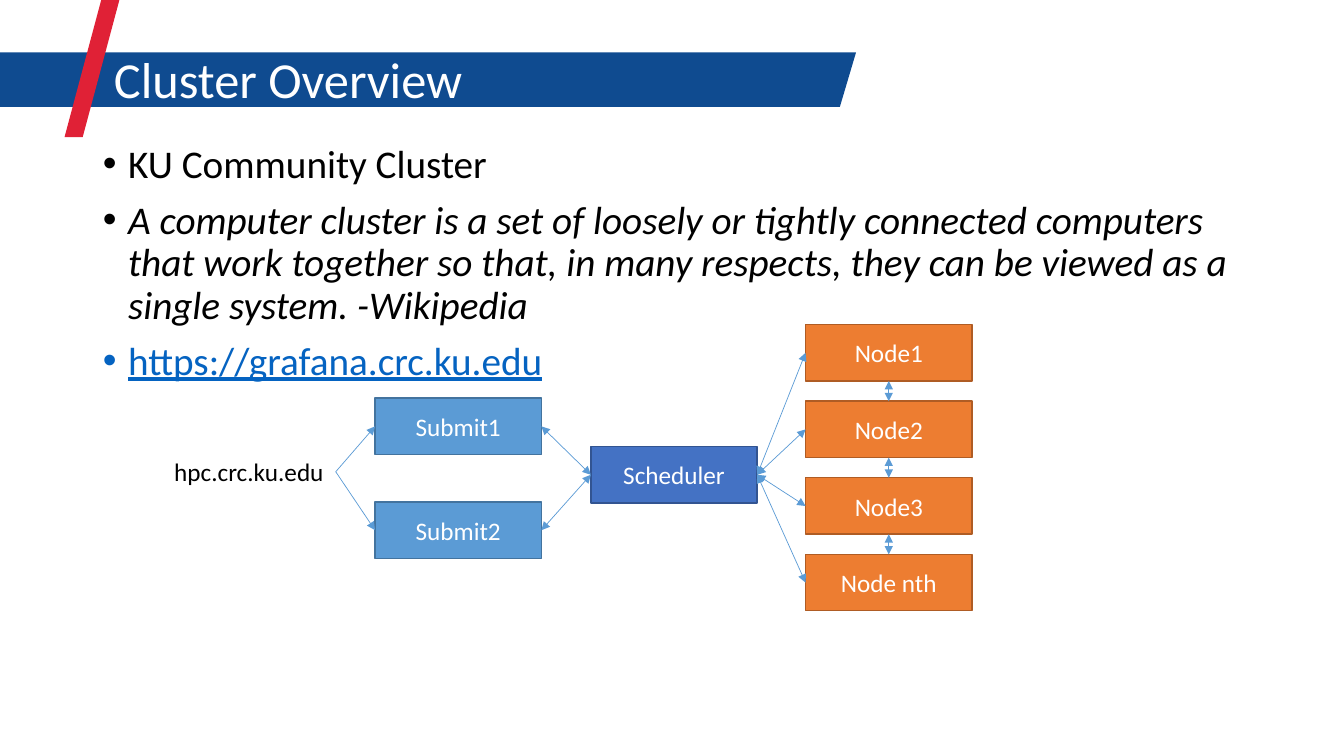
from pptx import Presentation
from pptx.dml.color import RGBColor
from pptx.enum.shapes import MSO_CONNECTOR, MSO_SHAPE
from pptx.enum.text import MSO_ANCHOR, MSO_AUTO_SIZE, PP_ALIGN
from pptx.oxml.ns import qn
from pptx.util import Inches, Pt
from lxml.etree import SubElement

NAVY = RGBColor(0x0F, 0x4B, 0x90)
RED = RGBColor(0xE0, 0x21, 0x36)
WHITE = RGBColor(0xFF, 0xFF, 0xFF)
BLACK = RGBColor(0x00, 0x00, 0x00)
LINK = RGBColor(0x05, 0x63, 0xC1)
SKY = RGBColor(0x5B, 0x9B, 0xD5)
SKY_EDGE = RGBColor(0x43, 0x73, 0x9E)
ORANGE = RGBColor(0xED, 0x7D, 0x31)
ORANGE_EDGE = RGBColor(0xAF, 0x5C, 0x24)
BLUE = RGBColor(0x44, 0x72, 0xC4)
BLUE_EDGE = RGBColor(0x32, 0x54, 0x91)

TOP, LEFT, BOTTOM, RIGHT = range(4)
BOX_W, BOX_H = 1.65, 0.56


def place(sp, x, y, w, h):
    values = {"left": x, "top": y, "width": w, "height": h}
    for name, value in values.items():
        setattr(sp, name, Inches(value))


def write(p, text, size, color, **formats):
    r = p.add_run()
    r.text = text
    formats = {"name": "Calibri", "size": Pt(size), **formats}
    for name, value in formats.items():
        setattr(r.font, name, value)
    r.font.color.rgb = color


def add_outline(s, points, color):
    points = [(Inches(x), Inches(y)) for x, y in points]
    builder = s.shapes.build_freeform(*points[0])
    builder.add_line_segments(points[1:], close=True)
    sp = builder.convert_to_shape()
    sp.shadow.inherit = False
    sp.fill.solid()
    sp.fill.fore_color.rgb = color
    sp.line.fill.background()


def add_banner(s, x, y, w, h):
    slant = 0.16
    add_outline(s, [(x, y), (x + w, y), (x + w - slant, y + h), (x, y + h)], NAVY)
    left, top, bottom, lean, thick = x + 0.8, y - 1.14, y + 0.84, 0.53, 0.18
    add_outline(s, [(left, bottom), (left + lean, top),
                    (left + lean + thick, top), (left + thick, bottom)], RED)


def prepare_placeholder(sp, x, y, w, h):
    sp.element.getparent().append(sp.element)
    place(sp, x, y, w, h)
    tf = sp.text_frame
    formats = {"auto_size": MSO_AUTO_SIZE.NONE, "word_wrap": True,
               "vertical_anchor": MSO_ANCHOR.TOP}
    for name, value in formats.items():
        setattr(tf, name, value)
    return tf


def add_title(s, text, x, y, w, h):
    p = prepare_placeholder(s.shapes.title, x, y, w, h).paragraphs[0]
    p.alignment = PP_ALIGN.LEFT
    p.line_spacing = 0.9
    write(p, text, 36, WHITE)


def add_bullets(s, items, x, y, w, h):
    tf = prepare_placeholder(s.placeholders[1], x, y, w, h)
    for i, (text, color, formats) in enumerate(items):
        p = tf.add_paragraph() if i else tf.paragraphs[0]
        pPr = p._p.get_or_add_pPr()
        pPr.set("marL", str(Inches(0.25)))
        pPr.set("indent", str(Inches(-0.25)))
        p.line_spacing = 0.9
        p.space_before = Pt(10 if i else 0)
        write(p, text, 28, color, **formats)


def add_box(s, text, x, y, fill, edge):
    sp = s.shapes.add_shape(MSO_SHAPE.RECTANGLE, Inches(x), Inches(y),
                            Inches(BOX_W), Inches(BOX_H))
    sp.shadow.inherit = False
    sp.fill.solid()
    sp.fill.fore_color.rgb = fill
    sp.line.color.rgb = edge
    sp.line.width = Pt(1)
    tf = sp.text_frame
    tf.vertical_anchor = MSO_ANCHOR.MIDDLE
    p = tf.paragraphs[0]
    p.alignment = PP_ALIGN.CENTER
    write(p, text, 18, WHITE)
    return sp


def add_label(s, text, x, y, w, h):
    tb = s.shapes.add_textbox(Inches(x), Inches(y), Inches(w), Inches(h))
    tf = tb.text_frame
    tf.word_wrap = False
    tf.auto_size = MSO_AUTO_SIZE.SHAPE_TO_FIT_TEXT
    write(tf.paragraphs[0], text, 18, BLACK)
    return tb


def add_arrow(s, start, start_side, end, end_side, ends=("headEnd", "tailEnd")):
    c = s.shapes.add_connector(MSO_CONNECTOR.STRAIGHT, 0, 0, 0, 0)
    c.begin_connect(start, start_side)
    c.end_connect(end, end_side)
    c.line.color.rgb = SKY
    c.line.width = Pt(0.5)
    spPr = c._element.spPr
    for end_tag in ends:
        SubElement(spPr.find(qn("a:ln")), qn(f"a:{end_tag}")).set("type", "triangle")
    SubElement(spPr, qn("a:effectLst"))


def add_diagram(s, x, y):
    host = add_label(s, "hpc.crc.ku.edu", x, y + 1.26, 1.7, 0.4)
    submits = [add_box(s, f"Submit{i + 1}", x + 2.09, y + 0.73 + 1.03 * i, SKY, SKY_EDGE)
               for i in range(2)]
    scheduler = add_box(s, "Scheduler", x + 4.23, y + 1.21, BLUE, BLUE_EDGE)
    nodes = [add_box(s, text, x + 6.36, y + 0.76 * i, ORANGE, ORANGE_EDGE)
             for i, text in enumerate(("Node1", "Node2", "Node3", "Node nth"))]
    for submit in submits:
        add_arrow(s, host, RIGHT, submit, LEFT, ends=("tailEnd",))
        add_arrow(s, submit, RIGHT, scheduler, LEFT)
    for node in nodes:
        add_arrow(s, scheduler, RIGHT, node, LEFT)
    for upper, lower in zip(nodes, nodes[1:]):
        add_arrow(s, upper, BOTTOM, lower, TOP)


def main():
    prs = Presentation()
    prs.slide_width, prs.slide_height = Inches(13.33), Inches(7.5)
    s = prs.slides.add_slide(prs.slide_layouts[1])
    add_banner(s, -0.16, 0.52, 8.65, 0.54)
    add_title(s, "Cluster Overview", 1.03, 0.5, 11.39, 0.53)
    add_bullets(s, [
        ("KU Community Cluster", BLACK, {}),
        ("A computer cluster is a set of loosely or tightly connected computers "
         "that work together so that, in many respects, they can be viewed as a "
         "single system. -Wikipedia", BLACK, {"italic": True}),
        ("https://grafana.crc.ku.edu", LINK, {"underline": True}),
    ], 0.92, 1.38, 11.5, 4.91)
    add_diagram(s, 1.63, 3.22)
    prs.save("out.pptx")


if __name__ == "__main__":
    main()
